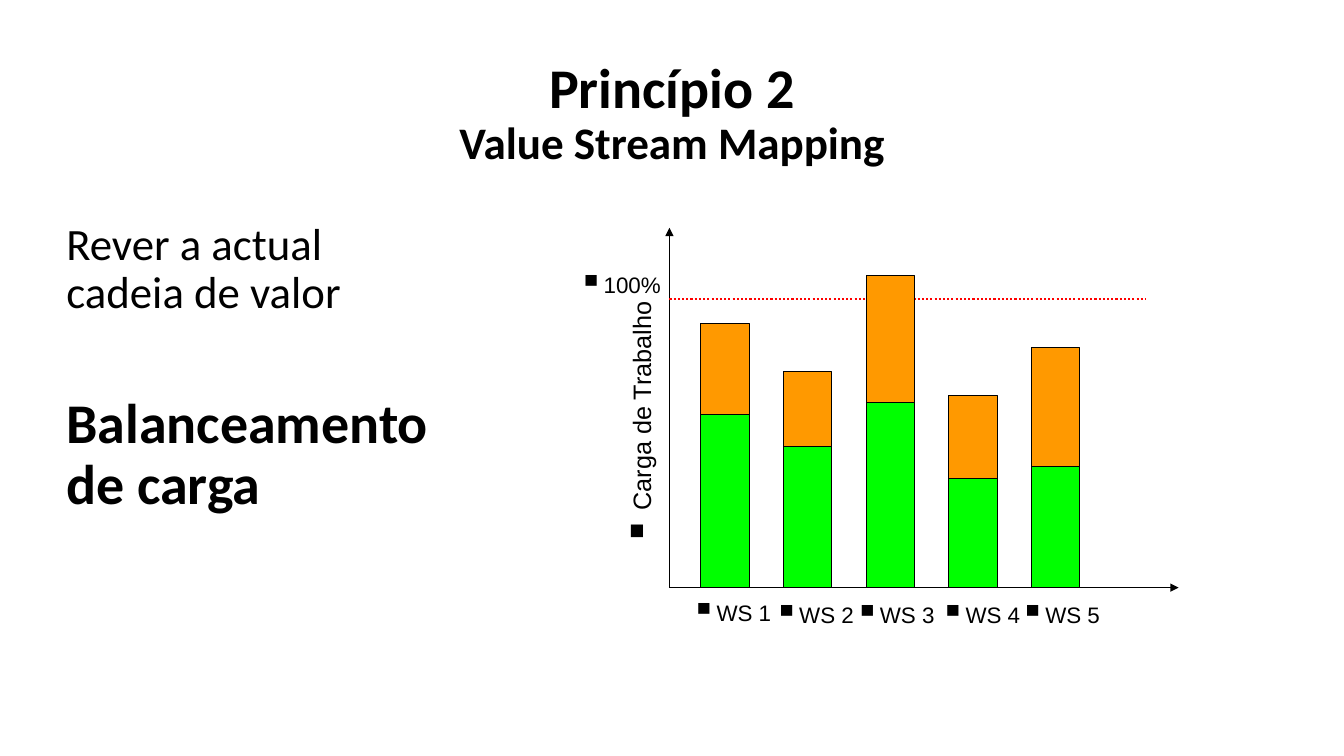
from dataclasses import dataclass

from lxml import etree
from pptx import Presentation
from pptx.dml.color import RGBColor
from pptx.enum.dml import MSO_LINE
from pptx.enum.shapes import MSO_CONNECTOR, MSO_SHAPE
from pptx.enum.text import MSO_ANCHOR, MSO_AUTO_SIZE, PP_ALIGN
from pptx.oxml.ns import qn
from pptx.util import Inches, Pt

BLACK = RGBColor(0x00, 0x00, 0x00)
RED = RGBColor(0xFF, 0x00, 0x00)
ORANGE = RGBColor(0xFF, 0x99, 0x00)
GREEN = RGBColor(0x00, 0xFF, 0x00)

STRAIGHT = MSO_CONNECTOR.STRAIGHT
RECTANGLE = MSO_SHAPE.RECTANGLE
DOTTED = MSO_LINE.ROUND_DOT
CENTER = PP_ALIGN.CENTER
TOP, MIDDLE = MSO_ANCHOR.TOP, MSO_ANCHOR.MIDDLE
GROW = MSO_AUTO_SIZE.SHAPE_TO_FIT_TEXT

AXIS_X, BASELINE = 6.64, 5.83
BAR_LEFT, BAR_PITCH, BAR_WIDTH = 6.95, 0.82, 0.48


@dataclass(frozen=True)
class Workstation:
    name: str
    orange_top: float
    green_top: float
    label_left: float
    label_top: float = 5.91


@dataclass(frozen=True)
class AxisLine:
    end_x: float
    y: float
    end_y: float
    color: RGBColor = BLACK
    width: float = 0.75
    is_arrow: bool = True


@dataclass(frozen=True)
class Label:
    text: str
    left: float
    top: float
    width: float
    height: float = 0.34
    size: float = 16
    rotation: float = 0


@dataclass(frozen=True)
class TextLine:
    text: str
    size: float
    bold: bool = False
    space_before: float = 0


WORKSTATIONS = [
    Workstation("WS 1", 3.21, 4.11, 6.76, 5.89),
    Workstation("WS 2", 3.69, 4.43, 7.58),
    Workstation("WS 3", 2.73, 3.99, 8.38),
    Workstation("WS 4", 3.92, 4.75, 9.23),
    Workstation("WS 5", 3.45, 4.63, 10.02),
]
AXIS_LINES = [
    AxisLine(AXIS_X, BASELINE, 2.26),
    AxisLine(11.69, BASELINE, BASELINE),
    AxisLine(11.36, 2.97, 2.97, RED, 1.5, False),
]
AXIS_LABELS = [
    Label("100%", 5.64, 2.64, 1.56),
    Label(" Carga de Trabalho", 5.05, 4, 2.62, 0.4, 18, 270),
]
TITLE = [
    TextLine("Princípio 2", 40, True),
    TextLine("Value Stream Mapping", 32.2, True),
]
BODY = [
    TextLine("Rever a actual cadeia de valor", 32),
    TextLine("Balanceamento de carga", 40, True, 55),
]


def set_attributes(target, values: dict) -> None:
    for name, value in values.items():
        setattr(target, name, value)


def add_axis_line(slide, line: AxisLine) -> None:
    connector = slide.shapes.add_connector(
        STRAIGHT, Inches(AXIS_X), Inches(line.y), Inches(line.end_x), Inches(line.end_y)
    )
    connector.line.color.rgb = line.color
    connector.line.width = Pt(line.width)
    if line.is_arrow:
        etree.SubElement(connector.line._get_or_add_ln(), qn("a:tailEnd"), type="triangle")
    else:
        connector.line.dash_style = DOTTED
    etree.SubElement(connector._element.spPr, qn("a:effectLst"))


def add_bar(slide, left: float, top: float, color: RGBColor) -> None:
    bar = slide.shapes.add_shape(
        RECTANGLE, Inches(left), Inches(top), Inches(BAR_WIDTH), Inches(BASELINE - top)
    )
    bar.shadow.inherit = False
    bar.fill.solid()
    bar.fill.fore_color.rgb = color
    bar.line.color.rgb = BLACK
    bar.line.width = Pt(0.75)


def add_bulleted_label(slide, label: Label) -> None:
    box = slide.shapes.add_textbox(
        Inches(label.left), Inches(label.top), Inches(label.width), Inches(label.height)
    )
    box.rotation = label.rotation
    set_attributes(box.text_frame, {"word_wrap": True, "auto_size": GROW})
    paragraph = box.text_frame.paragraphs[0]
    properties = paragraph._p.get_or_add_pPr()
    etree.SubElement(properties, qn("a:buSzPct"), val="150000")
    etree.SubElement(properties, qn("a:buChar"), char="▪")
    run = paragraph.add_run()
    run.text = label.text
    set_attributes(run.font, {"name": "Arial", "size": Pt(label.size)})
    run.font.color.rgb = BLACK


def add_text_block(slide, left: float, top: float, width: float, height: float,
                   lines: list[TextLine], anchor=TOP, alignment=None) -> None:
    box = slide.shapes.add_textbox(Inches(left), Inches(top), Inches(width), Inches(height))
    frame = box.text_frame
    set_attributes(frame, {"word_wrap": True, "vertical_anchor": anchor})
    for index, line in enumerate(lines):
        paragraph = frame.add_paragraph() if index else frame.paragraphs[0]
        set_attributes(paragraph, {
            "alignment": alignment,
            "line_spacing": 0.9,
            "space_before": Pt(line.space_before),
        })
        run = paragraph.add_run()
        run.text = line.text
        set_attributes(run.font, {"name": "Calibri", "size": Pt(line.size), "bold": line.bold})
        run.font.color.rgb = BLACK


def main() -> None:
    presentation = Presentation()
    presentation.slide_width = Inches(13.33)
    presentation.slide_height = Inches(7.5)
    slide = presentation.slides.add_slide(presentation.slide_layouts[6])

    for line in AXIS_LINES:
        add_axis_line(slide, line)
    for index, station in enumerate(WORKSTATIONS):
        left = BAR_LEFT + index * BAR_PITCH
        add_bar(slide, left, station.orange_top, ORANGE)
        add_bar(slide, left, station.green_top, GREEN)
        add_bulleted_label(
            slide, Label(station.name, station.label_left, station.label_top, 1.14)
        )
    for label in AXIS_LABELS:
        add_bulleted_label(slide, label)

    add_text_block(slide, 0.56, 2.15, 3.94, 3.19, BODY)
    add_text_block(slide, 0, 0.48, 13.33, 1.31, TITLE, MIDDLE, CENTER)
    presentation.save("out.pptx")


if __name__ == "__main__":
    main()
